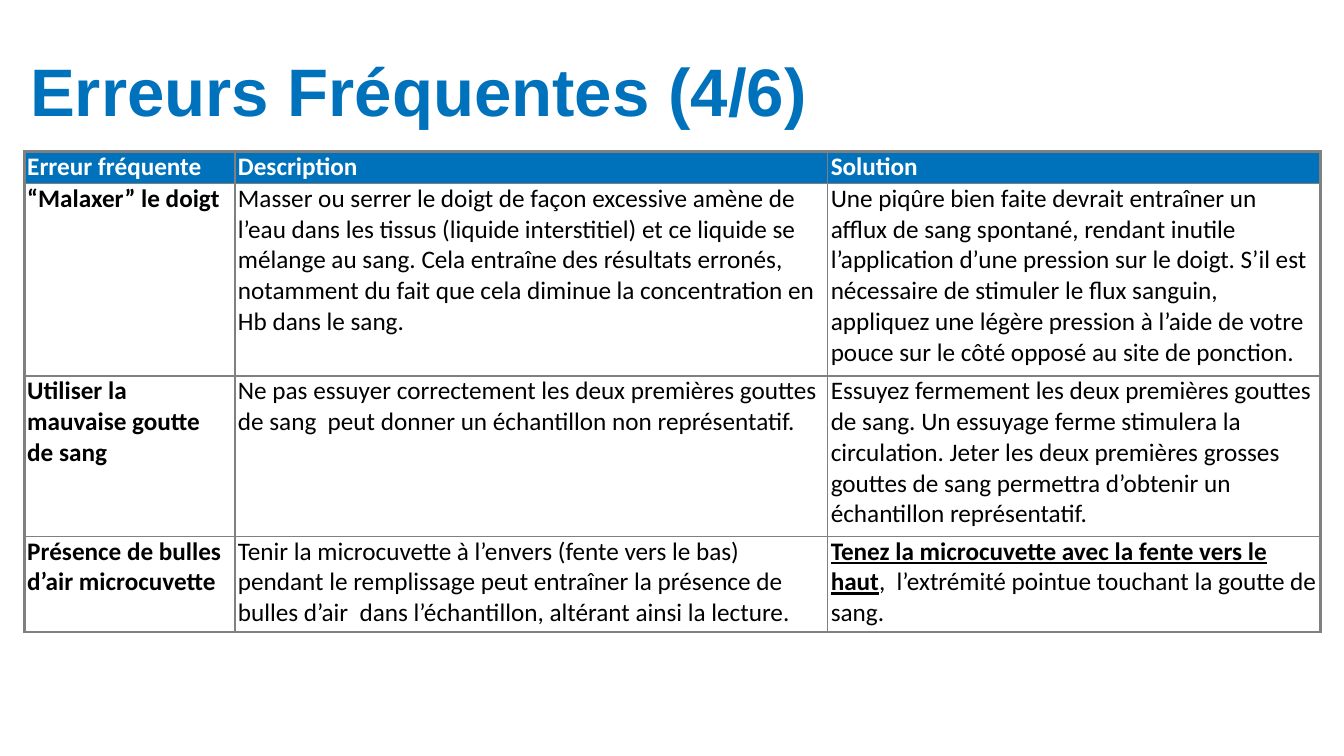
from dataclasses import dataclass

import pptx
import pptx.dml.color
import pptx.enum.text
import pptx.oxml
import pptx.oxml.ns
import pptx.util

BLUE = pptx.dml.color.RGBColor(0x00, 0x72, 0xBC)
WHITE = pptx.dml.color.RGBColor(0xFF, 0xFF, 0xFF)
BLACK = pptx.dml.color.RGBColor(0x00, 0x00, 0x00)
GREY = pptx.dml.color.RGBColor(0x80, 0x80, 0x80)
THIN, THICK = 1, 2.25
Inches = pptx.util.Inches


@dataclass
class Span:
    text: str
    bold: bool = False
    underline: bool = False


@dataclass
class ErrorRow:
    height: float
    cells: list[list[Span]]


COLUMN_WIDTHS = [2.09, 5.88, 4.89]
ROWS = [
    ErrorRow(0.32, [
        [Span("Erreur fréquente", True)],
        [Span("Description", True)],
        [Span("Solution", True)],
    ]),
    ErrorRow(1.91, [
        [Span("“Malaxer” le doigt", True)],
        [Span("Masser ou serrer le doigt de façon excessive amène de l’eau dans "
              "les tissus (liquide interstitiel) et ce liquide se mélange au sang. "
              "Cela entraîne des résultats erronés, notamment du fait que cela "
              "diminue la concentration en Hb dans le sang.")],
        [Span("Une piqûre bien faite devrait entraîner un afflux de sang spontané, "
              "rendant inutile l’application d’une pression sur le doigt. S’il est "
              "nécessaire de stimuler le flux sanguin, appliquez une légère pression "
              "à l’aide de votre pouce sur le côté opposé au site de ponction.")],
    ]),
    ErrorRow(1.59, [
        [Span("Utiliser la mauvaise goutte de sang", True)],
        [Span("Ne pas essuyer correctement les deux premières gouttes de sang  peut "
              "donner un échantillon non représentatif.")],
        [Span("Essuyez fermement les deux premières gouttes de sang. Un essuyage "
              "ferme stimulera la circulation. Jeter les deux premières grosses "
              "gouttes de sang permettra d’obtenir un échantillon représentatif.")],
    ]),
    ErrorRow(0.95, [
        [Span("Présence de bulles d’air microcuvette", True)],
        [Span("Tenir la microcuvette à l’envers (fente vers le bas) pendant le "
              "remplissage peut entraîner la présence de bulles d’air  dans "
              "l’échantillon, altérant ainsi la lecture.")],
        [Span("Tenez la microcuvette avec la fente vers le haut", True, True),
         Span(",  l’extrémité pointue touchant la goutte de sang.")],
    ]),
]


def set_attributes(target: object, values: dict[str, object]) -> None:
    for name, value in values.items():
        setattr(target, name, value)


def add_spans(para: object, spans: list[Span], font_name: str, size: int,
              color: pptx.dml.color.RGBColor) -> None:
    for span in spans:
        run = para.add_run()
        run.text = span.text
        set_attributes(run.font, {
            "name": font_name, "size": pptx.util.Pt(size),
            "bold": span.bold, "underline": span.underline,
        })
        run.font.color.rgb = color


def set_borders(cell: object, widths: dict[str, float]) -> None:
    properties = cell._tc.get_or_add_tcPr()
    for position, (side, width) in enumerate(widths.items()):
        border = pptx.oxml.parse_xml(
            f'<a:{side} {pptx.oxml.ns.nsdecls("a")} w="{int(pptx.util.Pt(width))}">'
            f'<a:solidFill><a:srgbClr val="{GREY}"/></a:solidFill></a:{side}>')
        properties.insert(position, border)


def add_title(page: object) -> None:
    box = page.shapes.add_textbox(Inches(0.3), Inches(0.3), Inches(12.77), Inches(1))
    set_attributes(box.text_frame, {
        "word_wrap": True, "vertical_anchor": pptx.enum.text.MSO_ANCHOR.BOTTOM,
        "margin_left": 0, "margin_right": 0, "margin_top": 0, "margin_bottom": 0,
    })
    para = box.text_frame.paragraphs[0]
    para.line_spacing = 0.9
    add_spans(para, [Span("Erreurs Fréquentes (4/6)", True)], "Arial", 48, BLUE)


def add_error_table(page: object) -> None:
    last_column = len(COLUMN_WIDTHS) - 1
    table = page.shapes.add_table(
        len(ROWS), len(COLUMN_WIDTHS), Inches(0.24), Inches(1.5),
        Inches(sum(COLUMN_WIDTHS)), Inches(sum(row.height for row in ROWS))).table
    set_attributes(table, {"first_row": False, "horz_banding": False})
    for column, width in zip(table.columns, COLUMN_WIDTHS):
        column.width = Inches(width)
    for row_index, row in enumerate(ROWS):
        table.rows[row_index].height = Inches(row.height)
        is_header = row_index == 0
        for column_index, spans in enumerate(row.cells):
            cell = table.cell(row_index, column_index)
            set_attributes(cell, {
                "margin_left": Inches(0.03), "margin_right": Inches(0.03),
                "margin_top": 0, "margin_bottom": 0,
            })
            if is_header:
                cell.fill.solid()
                cell.fill.fore_color.rgb = BLUE
            else:
                cell.fill.background()
            set_borders(cell, {
                "lnL": THICK if column_index == 0 else THIN,
                "lnR": THICK if column_index == last_column else THIN,
                "lnT": THICK if is_header else THIN,
                "lnB": THIN,
            })
            add_spans(cell.text_frame.paragraphs[0], spans, "Calibri", 18,
                      WHITE if is_header else BLACK)


def main() -> None:
    deck = pptx.Presentation()
    set_attributes(deck, {"slide_width": Inches(13.33), "slide_height": Inches(7.5)})
    page = deck.slides.add_slide(deck.slide_layouts[6])
    add_error_table(page)
    add_title(page)
    deck.save("out.pptx")


if __name__ == "__main__":
    main()
